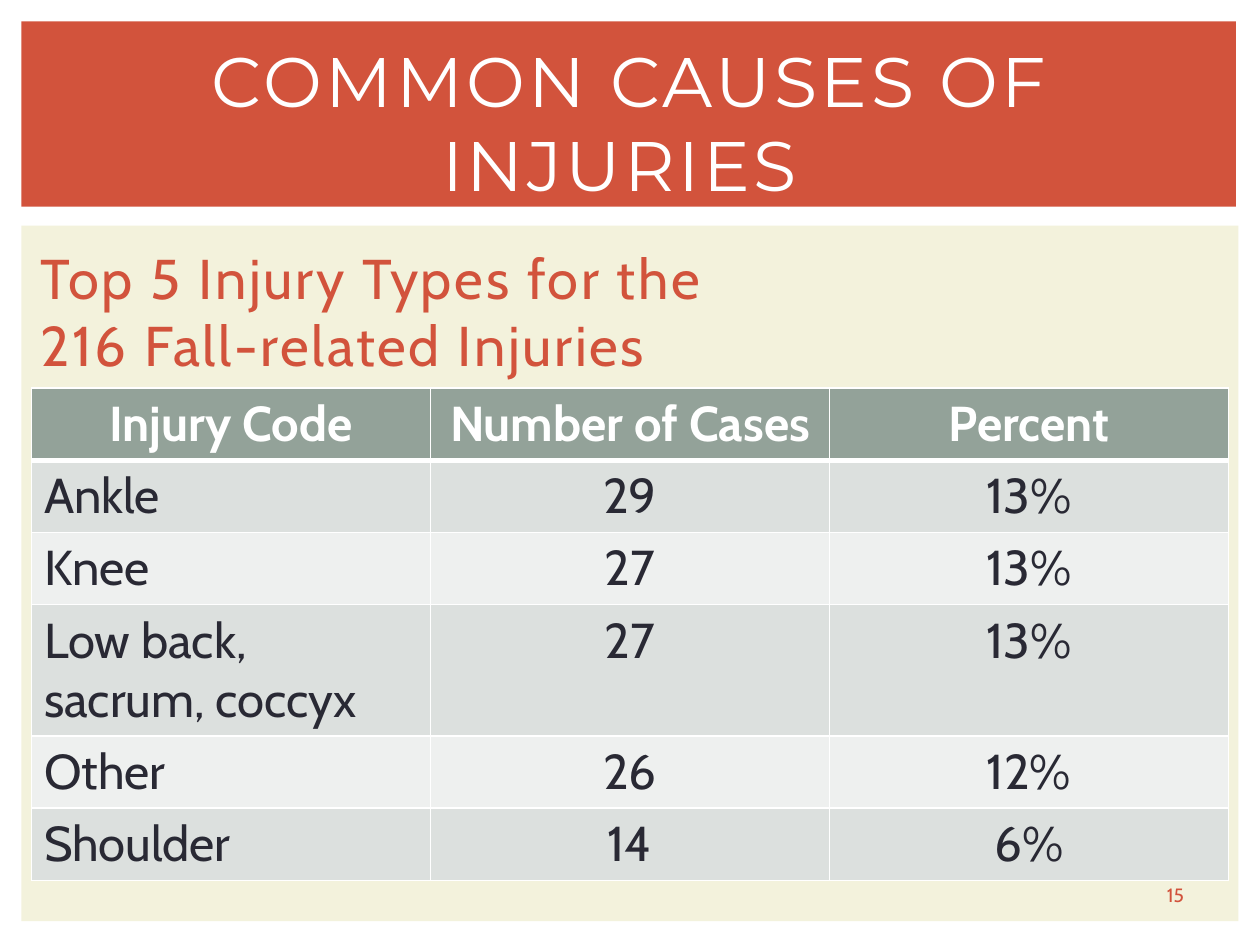
from dataclasses import dataclass

from lxml.etree import SubElement
from pptx import Presentation
from pptx.dml.color import RGBColor
from pptx.enum.shapes import MSO_SHAPE
from pptx.enum.text import MSO_ANCHOR, MSO_AUTO_SIZE, PP_ALIGN
from pptx.oxml.ns import qn
from pptx.util import Inches, Pt

HUES = {
    "white": "FFFFFF", "cream": "F3F2DC", "red": "D2533C", "sage": "93A299",
    "dark": "DCE0DE", "light": "EEF0EF", "ink": "292934",
}


@dataclass
class Box:
    left: float
    top: float
    width: float
    height: float

    def spans(self) -> list:
        return [Inches(n) for n in (self.left, self.top, self.width, self.height)]


@dataclass
class Style:
    size: float
    hue: str
    face: str = "Cabin"
    bold: bool = False
    track: float = 0


@dataclass
class Panel:
    box: Box
    hue: str


PANELS = [
    Panel(Box(0.17, 1.79, 9.66, 5.52), "cream"),
    Panel(Box(0.17, 0.17, 9.64, 1.47), "red"),
]
TITLE = Style(40, "white", "Montserrat", track=2)
LEAD = Style(32, "red", track=1.5)
HEAD = Style(28, "white", bold=True)
CELL = Style(28, "ink")
PAGE = Style(11, "red")
ROWS = [
    ("Injury Code", "Number of Cases", "Percent"),
    ("Ankle", "29", "13%"),
    ("Knee", "27", "13%"),
    ("Low back, sacrum, coccyx", "27", "13%"),
    ("Other", "26", "12%"),
    ("Shoulder", "14", "6%"),
]
HIGH, TALL = 0.56, 0.96


def tint(name: str) -> RGBColor:
    return RGBColor.from_string(HUES[name])


def write(frame, text: str, style: Style, align=PP_ALIGN.CENTER) -> None:
    frame.text = text
    para = frame.paragraphs[0]
    para.alignment = align
    look = {"name": style.face, "size": Pt(style.size), "bold": style.bold}
    for run in para.runs:
        for key, value in look.items():
            setattr(run.font, key, value)
        run.font.color.rgb = tint(style.hue)
        if style.track:
            run.font._element.set("spc", str(int(style.track * 100)))


def place(shape, box: Box, anchor) -> None:
    for key, value in zip(("left", "top", "width", "height"), box.spans()):
        setattr(shape, key, value)
    frame = shape.text_frame
    form = {"word_wrap": True, "auto_size": MSO_AUTO_SIZE.NONE,
            "vertical_anchor": anchor}
    for key, value in form.items():
        setattr(frame, key, value)


def add_panel(slide, panel: Panel, depth: int) -> None:
    """Draw a filled band behind the placeholders."""
    shape = slide.shapes.add_shape(MSO_SHAPE.RECTANGLE, *panel.box.spans())
    shape.shadow.inherit = False
    shape.fill.solid()
    shape.fill.fore_color.rgb = tint(panel.hue)
    shape.line.fill.background()
    slide.shapes._spTree.insert(2 + depth, shape._element)


def add_edges(cell, base: float) -> None:
    """Give a cell white borders; base is the width of the lower one."""
    props = cell._tc.get_or_add_tcPr()
    for side, wide in {"L": 1, "R": 1, "T": 1, "B": base}.items():
        line = SubElement(props, qn(f"a:ln{side}"), w=str(Pt(wide)))
        fill = SubElement(line, qn("a:solidFill"))
        SubElement(fill, qn("a:srgbClr"), val=HUES["white"])


def add_grid(slide, box: Box) -> None:
    table = slide.shapes.add_table(len(ROWS), len(ROWS[0]), *box.spans()).table
    for col in table.columns:
        col.width = Inches(box.width / len(ROWS[0]))
    for r, row in enumerate(ROWS):
        table.rows[r].height = Inches(TALL if len(row[0]) > 20 else HIGH)
        hue = "sage" if r == 0 else "dark" if r % 2 else "light"
        for c, text in enumerate(row):
            cell = table.cell(r, c)
            align = PP_ALIGN.LEFT if r and c == 0 else PP_ALIGN.CENTER
            write(cell.text_frame, text, CELL if r else HEAD, align)
            # The rule under the header belongs to both rows it parts.
            add_edges(cell, 1 if r else 3)
            if r == 1:
                cell._tc.tcPr.find(qn("a:lnT")).set("w", str(Pt(3)))
            cell.fill.solid()
            cell.fill.fore_color.rgb = tint(hue)


def main() -> None:
    deck = Presentation()
    deck.slide_width, deck.slide_height = Inches(10), Inches(7.5)
    slide = deck.slides.add_slide(deck.slide_layouts[1])
    for depth, panel in enumerate(PANELS):
        add_panel(slide, panel, depth)

    title, lead = slide.shapes.title, slide.placeholders[1]
    place(title, Box(0.42, 0.39, 9.17, 1.15), MSO_ANCHOR.MIDDLE)
    write(title.text_frame, "COMMON CAUSES OF INJURIES ", TITLE)

    place(lead, Box(0.17, 1.88, 9.58, 4.82), MSO_ANCHOR.TOP)
    write(lead.text_frame, "Top 5 Injury Types for the\v216 Fall-related Injuries",
          LEAD, PP_ALIGN.LEFT)
    props = lead.text_frame.paragraphs[0]._p.get_or_add_pPr()
    props.set("marL", str(Inches(0.05)))
    props.set("indent", "0")
    SubElement(props, qn("a:buNone"))

    add_grid(slide, Box(0.25, 3.08, 9.5, 5 * HIGH + TALL))

    box = Box(9.01, 6.95, 0.64, 0.3)
    page = slide.shapes.add_textbox(*box.spans())
    place(page, box, MSO_ANCHOR.MIDDLE)
    write(page.text_frame, "15", PAGE)
    deck.save("out.pptx")


if __name__ == "__main__":
    main()
